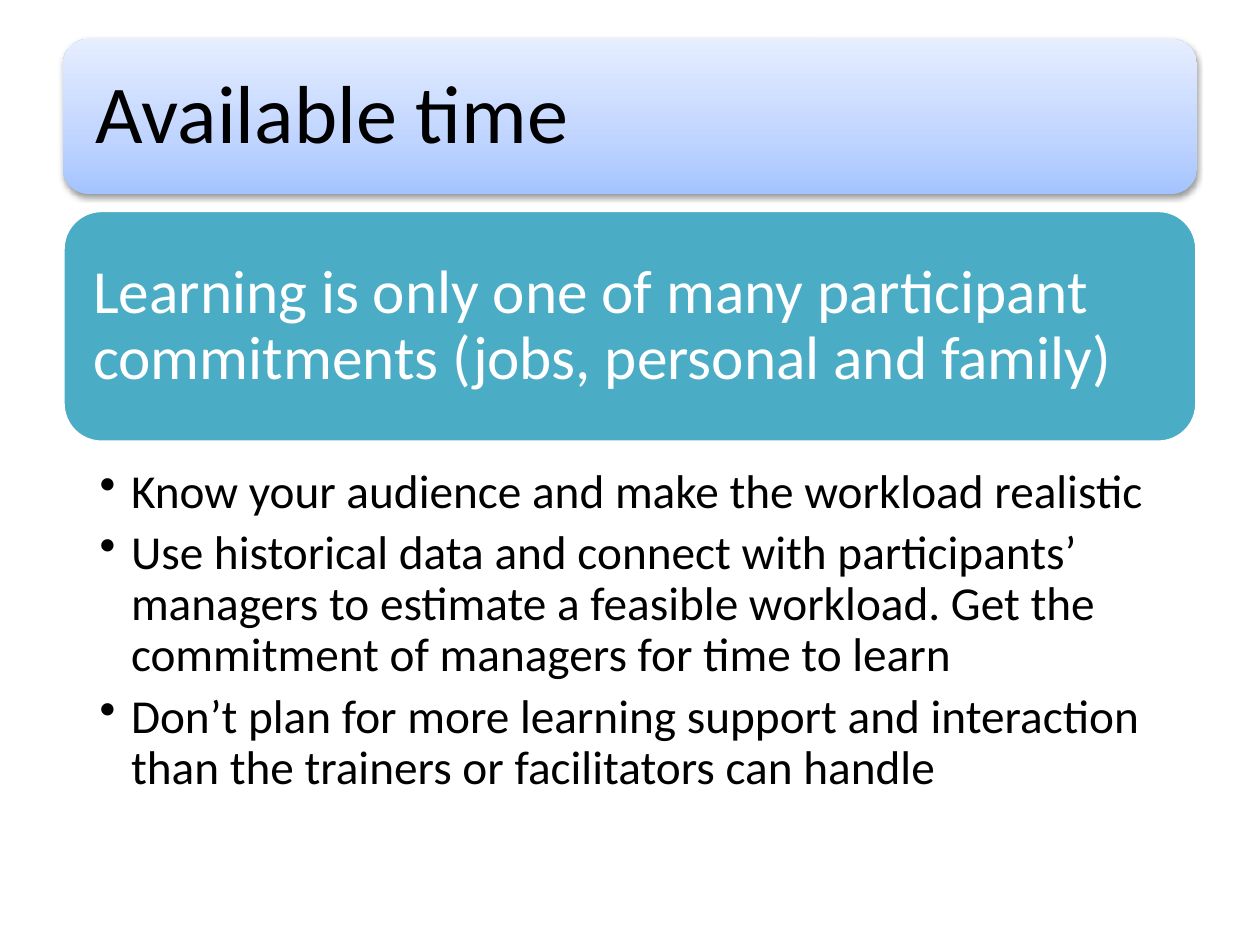
"""Build the slide on available time for learning."""
from pptx import Presentation
from pptx.dml.color import RGBColor
from pptx.enum.shapes import MSO_SHAPE
from pptx.enum.text import MSO_ANCHOR, MSO_AUTO_SIZE, PP_ALIGN
from pptx.oxml import parse_xml
from pptx.oxml.ns import nsdecls
from pptx.util import Inches, Pt

ROUND = MSO_SHAPE.ROUNDED_RECTANGLE
MID, TOP = MSO_ANCHOR.MIDDLE, MSO_ANCHOR.TOP
LEFT, FIXED = PP_ALIGN.LEFT, MSO_AUTO_SIZE.NONE

WIDE, HIGH = 10, 7.5
EDGE = 0.05 * WIDE
SPAN = WIDE - 2 * EDGE

TITLE = "Available time"
CLAIM = "Learning is only one of many participant commitments (jobs, personal and family)"
TIPS = [
    "Know your audience and make the workload realistic",
    "Use historical data and connect with participants’ managers to estimate "
    "a feasible workload. Get the commitment of managers for time to learn",
    "Don’t plan for more learning support and interaction than the trainers "
    "or facilitators can handle",
]
ROWS = {"title": (0.31, 1.23), "claim": (1.67, 1.84), "tips": (3.66, 2.77)}
STOPS = [(0, "A4C4FF"), (35, "BFD4FF"), (100, "E6EEFF")]


def paint(color, code):
    color.rgb = RGBColor.from_string(code)


def area(row, inset=0):
    top, high = ROWS[row]
    sides = EDGE + inset, top + inset, SPAN - 2 * inset, high - 2 * inset
    return [Inches(side) for side in sides]


def write(shape, lines, size, code, pads, anchor=MID, gap=0, bullet=False):
    frame = shape.text_frame
    form = {"word_wrap": True, "auto_size": FIXED, "vertical_anchor": anchor}
    for side, pad in zip(("left", "top", "right", "bottom"), pads):
        form[f"margin_{side}"] = Inches(pad)
    for name, value in form.items():
        setattr(frame, name, value)
    for i, line in enumerate(lines):
        para = frame.add_paragraph() if i else frame.paragraphs[0]
        para.text = line
        if bullet:
            props = para._p.get_or_add_pPr()
            props.set("marL", str(Inches(0.25)))
            props.set("indent", str(-Inches(0.25)))
            props.append(parse_xml(f'<a:buChar {nsdecls("a")} char="•"/>'))
        look = {"alignment": LEFT, "line_spacing": 0.9,
                "space_before": Pt(0), "space_after": Pt(gap)}
        for name, value in look.items():
            setattr(para, name, value)
        font = para.runs[0].font
        font.name, font.size = "Calibri", Pt(size)
        paint(font.color, code)


def shade(panel):
    props = panel._element.spPr
    stops = "".join(
        f'<a:gs pos="{pos * 1000}"><a:srgbClr val="{code}"/></a:gs>'
        for pos, code in STOPS)
    props[1].addnext(parse_xml(
        f'<a:gradFill {nsdecls("a")} rotWithShape="1"><a:gsLst>{stops}</a:gsLst>'
        '<a:lin ang="16200000" scaled="0"/></a:gradFill>'))
    props[-1].append(parse_xml(
        f'<a:outerShdw {nsdecls("a")} blurRad="{Pt(3.1)}" dist="{Pt(1.6)}" '
        'dir="5400000" rotWithShape="0"><a:srgbClr val="000000">'
        '<a:alpha val="38000"/></a:srgbClr></a:outerShdw>'))


def main():
    deck = Presentation()
    deck.slide_width, deck.slide_height = Inches(WIDE), Inches(HIGH)
    slide = deck.slides.add_slide(deck.slide_layouts[5])
    shapes = slide.shapes

    panel = shapes.add_shape(ROUND, *area("title"))
    panel.line.fill.background()
    panel.shadow.inherit = False
    shade(panel)
    title = shapes.title
    title._element.addprevious(panel._element)
    title.left, title.top, title.width, title.height = area("title", 0.06)
    write(title, [TITLE], 47, "000000", [0.2] * 4)

    claim = shapes.add_shape(ROUND, *area("claim"))
    claim.shadow.inherit = False
    claim.fill.solid()
    paint(claim.fill.fore_color, "4BACC6")
    paint(claim.line.color, "FFFFFF")
    claim.line.width = Pt(2)
    label = shapes.add_textbox(*area("claim", 0.09))
    write(label, [CLAIM], 35, "FFFFFF", [0.15] * 4)

    tips = shapes.add_textbox(*area("tips"))
    write(tips, TIPS, 27, "000000", (0.29, 0.05, 0.27, 0.05), TOP, 6, True)
    deck.save("out.pptx")


if __name__ == "__main__":
    main()
